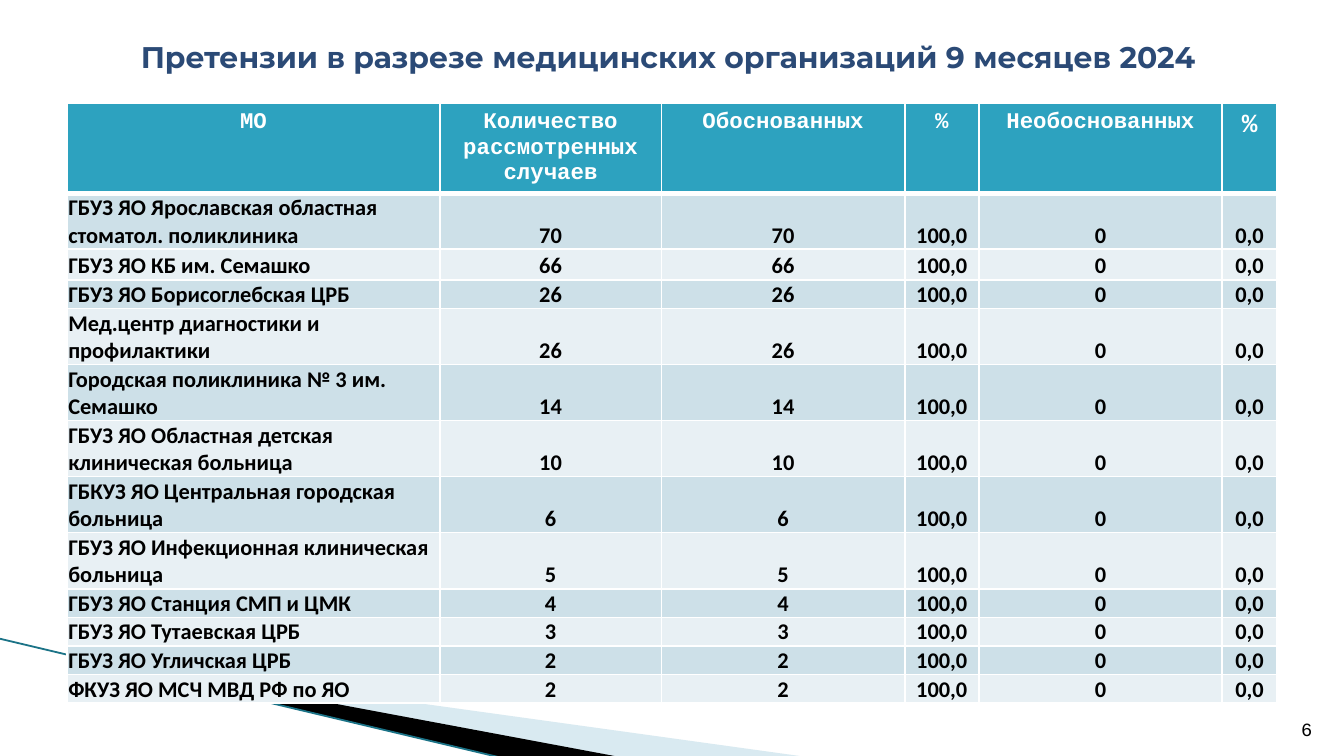
from lxml import etree
from pptx import Presentation
from pptx import util as u
from pptx.dml.color import RGBColor
from pptx.enum import shapes, text
from pptx.oxml import ns

Cm, Pt = u.Cm, u.Pt

COLORS = {
    "title": "2B4A76",
    "header": "2DA2BF",
    "odd": "CDE0E8",
    "even": "E8F0F4",
    "wave": "A0CBDC",
    "line": "1B7387",
    "black": "000000",
    "white": "FFFFFF",
}
HEADERS = ["МО", "Количество рассмотренных случаев", "Обоснованных", "%", "Необоснованных", "%"]
CLAIMS = [
    ("ГБУЗ ЯО Ярославская областная стоматол. поликлиника", 70, 1.06),
    ("ГБУЗ ЯО КБ им. Семашко", 66, 0.58),
    ("ГБУЗ ЯО Борисоглебская ЦРБ", 26, 0.54),
    ("Мед.центр диагностики и профилактики", 26, 1.06),
    ("Городская поликлиника № 3 им. Семашко", 14, 1.06),
    ("ГБУЗ ЯО Областная детская клиническая больница", 10, 1.06),
    ("ГБКУЗ ЯО Центральная городская больница", 6, 1.06),
    ("ГБУЗ ЯО Инфекционная клиническая больница", 5, 1.06),
    ("ГБУЗ ЯО Станция СМП и ЦМК", 4, 0.54),
    ("ГБУЗ ЯО Тутаевская ЦРБ", 3, 0.54),
    ("ГБУЗ ЯО Угличская ЦРБ", 2, 0.54),
    ("ФКУЗ ЯО МСЧ МВД РФ по ЯО", 2, 0.54),
]
HEADER_HEIGHT = 1.66
COLUMN_WIDTHS = [7.04, 4.19, 4.6, 1.4, 4.6, 1.04]


def color(name):
    return RGBColor.from_string(COLORS[name])


def style_paragraph(para, font, size, ink, align, bold=False):
    para.alignment = align
    para.font.name = font
    para.font.size = Pt(size)
    para.font.bold = bold
    para.font.color.rgb = color(ink)


def add_label(page, box, words, anchor, **style):
    label = page.shapes.add_textbox(*map(Cm, box))
    frame = label.text_frame
    frame.word_wrap = True
    frame.vertical_anchor = anchor
    frame.text = words
    style_paragraph(frame.paragraphs[0], **style)


def add_wedge(page, left, top, points, fill, opacity=100):
    corners = [(Cm(left + x), Cm(top + y)) for x, y in points]
    builder = page.shapes.build_freeform(*corners[0])
    builder.add_line_segments(corners[1:], close=True)
    wedge = builder.convert_to_shape()
    wedge.shadow.inherit = False
    wedge.line.fill.background()
    wedge.fill.solid()
    wedge.fill.fore_color.rgb = color(fill)
    if opacity < 100:
        tint = wedge.fill._xPr.find(".//" + ns.qn("a:srgbClr"))
        etree.SubElement(tint, ns.qn("a:alpha"), val=str(opacity * 1000))


def add_wave(page, left, top):
    add_wedge(page, left, top, [(0.05, 0.02), (13.76, 1.92), (10.23, 1.92)], "wave", 40)
    add_wedge(page, left, top, [(0, 0), (10.26, 1.92), (8.1, 1.94), (0.02, 0.02)], "black")
    edge = page.shapes.add_connector(
        shapes.MSO_CONNECTOR.STRAIGHT,
        Cm(left - 1.37), Cm(top - 0.3), Cm(left + 8.07), Cm(top + 1.94),
    )
    edge.line.color.rgb = color("line")
    edge.line.width = Pt(0.95)
    etree.SubElement(edge._element.spPr, ns.qn("a:effectLst"))


def set_borders(cell, widths):
    properties = cell._tc.get_or_add_tcPr()
    for index, (side, width) in enumerate(widths.items()):
        border = etree.Element(ns.qn("a:ln" + side), w=str(Pt(width)))
        fill = etree.SubElement(border, ns.qn("a:solidFill"))
        etree.SubElement(fill, ns.qn("a:srgbClr"), val=COLORS["white"])
        properties.insert(index, border)


def fill_cell(cell, words, fill, font, size, ink, align, top=1, bottom=1):
    cell.text = words
    cell.fill.solid()
    cell.fill.fore_color.rgb = color(fill)
    style_paragraph(cell.text_frame.paragraphs[0], font, size, ink, align, bold=True)
    set_borders(cell, {"L": 1, "R": 1, "T": top, "B": bottom})


def add_claims_table(page, left, top):
    heights = [HEADER_HEIGHT] + [height for _, _, height in CLAIMS]
    table = page.shapes.add_table(
        len(heights), len(HEADERS), Cm(left), Cm(top),
        Cm(sum(COLUMN_WIDTHS)), Cm(sum(heights)),
    ).table
    for column, width in zip(table.columns, COLUMN_WIDTHS):
        column.width = Cm(width)
    for row, height in zip(table.rows, heights):
        row.height = Cm(height)

    center = text.PP_ALIGN.CENTER
    last = len(HEADERS) - 1
    for index, words in enumerate(HEADERS):
        size = 14 if index == last else 12
        fill_cell(table.cell(0, index), words, "header", "Courier New", size,
                  "white", center, bottom=3)

    for number, (name, count, _) in enumerate(CLAIMS, start=1):
        values = [name, str(count), str(count), "100,0", "0", "0,0"]
        for index, words in enumerate(values):
            cell = table.cell(number, index)
            cell.vertical_anchor = text.MSO_ANCHOR.BOTTOM
            cell.margin_left = cell.margin_right = cell.margin_top = Cm(0.02)
            cell.margin_bottom = 0
            fill_cell(cell, words, "odd" if number % 2 else "even", "Calibri", 12, "black",
                      center if index else text.PP_ALIGN.LEFT, top=3 if number == 1 else 1)


def main():
    deck = Presentation()
    deck.slide_width = Cm(25.4)
    deck.slide_height = Cm(14.29)
    page = deck.slides.add_slide(deck.slide_layouts[6])
    add_wave(page, 1.35, 12.37)
    add_claims_table(page, 1.27, 1.96)
    add_label(page, (24.03, 13.36, 1.02, 0.76), "6", text.MSO_ANCHOR.BOTTOM,
              font="Courier New", size=10, ink="black", align=text.PP_ALIGN.RIGHT)
    add_label(page, (1.2, 0.58, 22.86, 0.97),
              "Претензии в разрезе медицинских организаций 9 месяцев 2024",
              text.MSO_ANCHOR.MIDDLE, font="Montserrat", size=16, ink="title",
              align=text.PP_ALIGN.CENTER, bold=True)
    deck.save("out.pptx")


if __name__ == "__main__":
    main()
